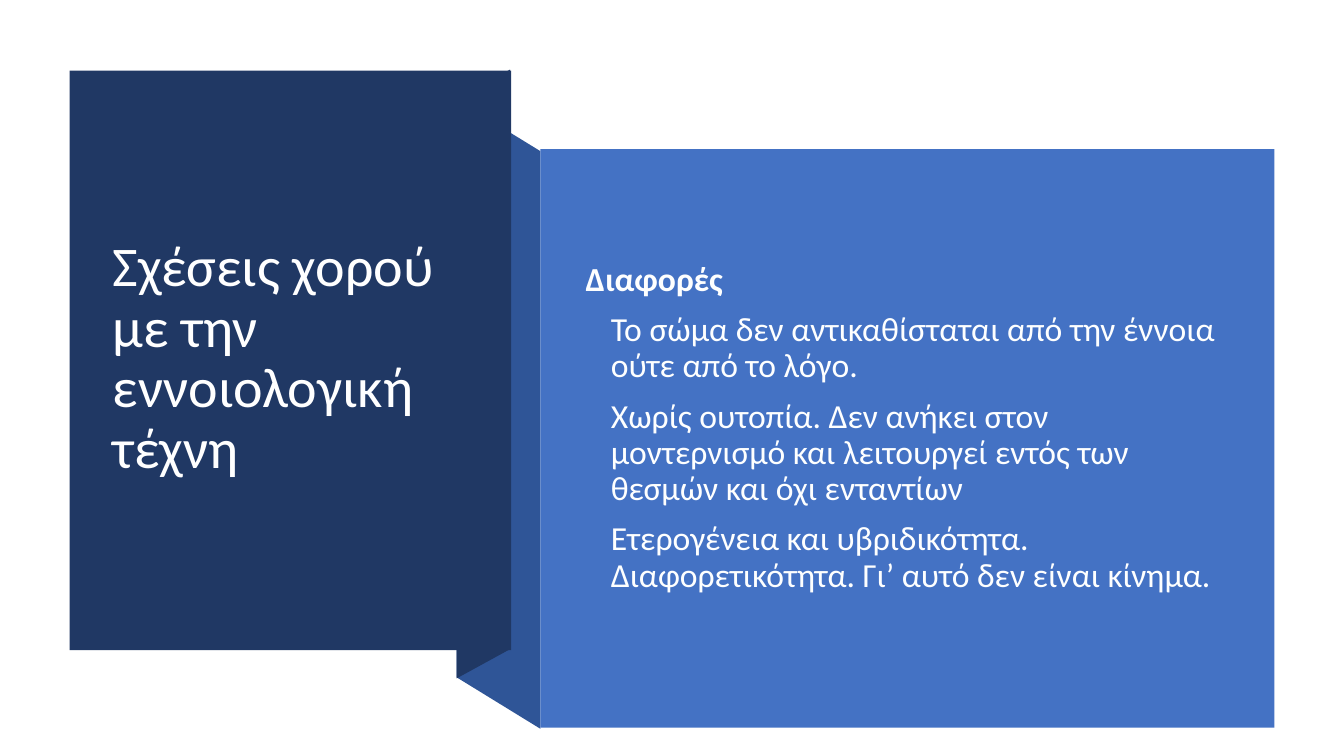
from pptx import Presentation
from pptx.dml.color import RGBColor
from pptx.enum.shapes import MSO_SHAPE
from pptx.enum.text import MSO_ANCHOR
from pptx.util import Pt

PX = 9144
RECTANGLE = MSO_SHAPE.RECTANGLE
MIDDLE = MSO_ANCHOR.MIDDLE

NAVY, FOLD_BLUE, PANEL_BLUE = "203864", "2F5597", "4472C4"
INDENT = 25

TITLE = "Σχέσεις χορού με την εννοιολογική τέχνη"
HEADING = "Διαφορές"
DIFFERENCES = [
    "Το σώμα δεν αντικαθίσταται από την έννοια ούτε από το λόγο.",
    "Χωρίς ουτοπία. Δεν ανήκει στον μοντερνισμό και λειτουργεί εντός των "
    "θεσμών και όχι ενταντίων",
    "Ετερογένεια και υβριδικότητα. Διαφορετικότητα. Γι’ αυτό δεν είναι κίνημα.",
]

TITLE_FONT = {"name": "Calibri", "size": Pt(40), "bold": False}
BODY_FONT = {"name": "Calibri", "size": Pt(24), "bold": False}
HEADING_FONT = {**BODY_FONT, "bold": True}


def color(hex_code):
    """Turn a hex string into a colour."""
    return RGBColor.from_string(hex_code)


def paint(panel, fill):
    """Give a panel a flat fill without line or shadow."""
    panel.shadow.inherit = False
    panel.fill.solid()
    panel.fill.fore_color.rgb = color(fill)
    panel.line.fill.background()


def add_panel(slide, left, top, width, height, fill):
    """Add a plain rectangular panel."""
    box = [length * PX for length in (left, top, width, height)]
    paint(slide.shapes.add_shape(RECTANGLE, *box), fill)


def add_fold(slide, corners, fill):
    """Add a slanted ribbon face through the given corners."""
    outline = slide.shapes.build_freeform(*corners[0], scale=PX)
    outline.add_line_segments(corners[1:], close=True)
    paint(outline.convert_to_shape(), fill)


def add_text(slide, left, top, width, height):
    """Add a wrapping, vertically centred text area and return its frame."""
    box = [length * PX for length in (left, top, width, height)]
    frame = slide.shapes.add_textbox(*box).text_frame
    frame.word_wrap = True
    frame.vertical_anchor = MIDDLE
    return frame


def write(paragraph, text, font, hex_code, margin=0, indent=0, before=0):
    """Write one formatted paragraph."""
    properties = paragraph._p.get_or_add_pPr()
    properties.set("marL", str(margin * PX))
    properties.set("indent", str(indent * PX))
    paragraph.line_spacing = 0.9
    paragraph.space_before = Pt(before)
    run = paragraph.add_run()
    run.text = text
    for attribute, value in font.items():
        setattr(run.font, attribute, value)
    run.font.color.rgb = color(hex_code)


def main():
    """Build the slide and save it."""
    deck = Presentation()
    deck.slide_width, deck.slide_height = 1333 * PX, 750 * PX
    slide = deck.slides.add_slide(deck.slide_layouts[6])

    add_fold(slide, [(536, 723), (453, 672), (453, 99), (536, 150)], FOLD_BLUE)
    add_fold(slide, [(506, 644), (453, 673), (453, 98), (506, 69)], NAVY)
    add_panel(slide, 69, 70, 438, 575, NAVY)
    title = add_text(slide, 102, 107, 371, 499)
    write(title.paragraphs[0], TITLE, TITLE_FONT, "FFFFFF")

    add_panel(slide, 536, 148, 728, 574, PANEL_BLUE)
    body = add_text(slide, 571, 188, 651, 474)
    write(body.paragraphs[0], HEADING, HEADING_FONT, "FEFFFF", INDENT, -INDENT)
    for difference in DIFFERENCES:
        write(body.add_paragraph(), difference, BODY_FONT, "FEFFFF", INDENT, before=10)

    deck.save("out.pptx")


if __name__ == "__main__":
    main()
